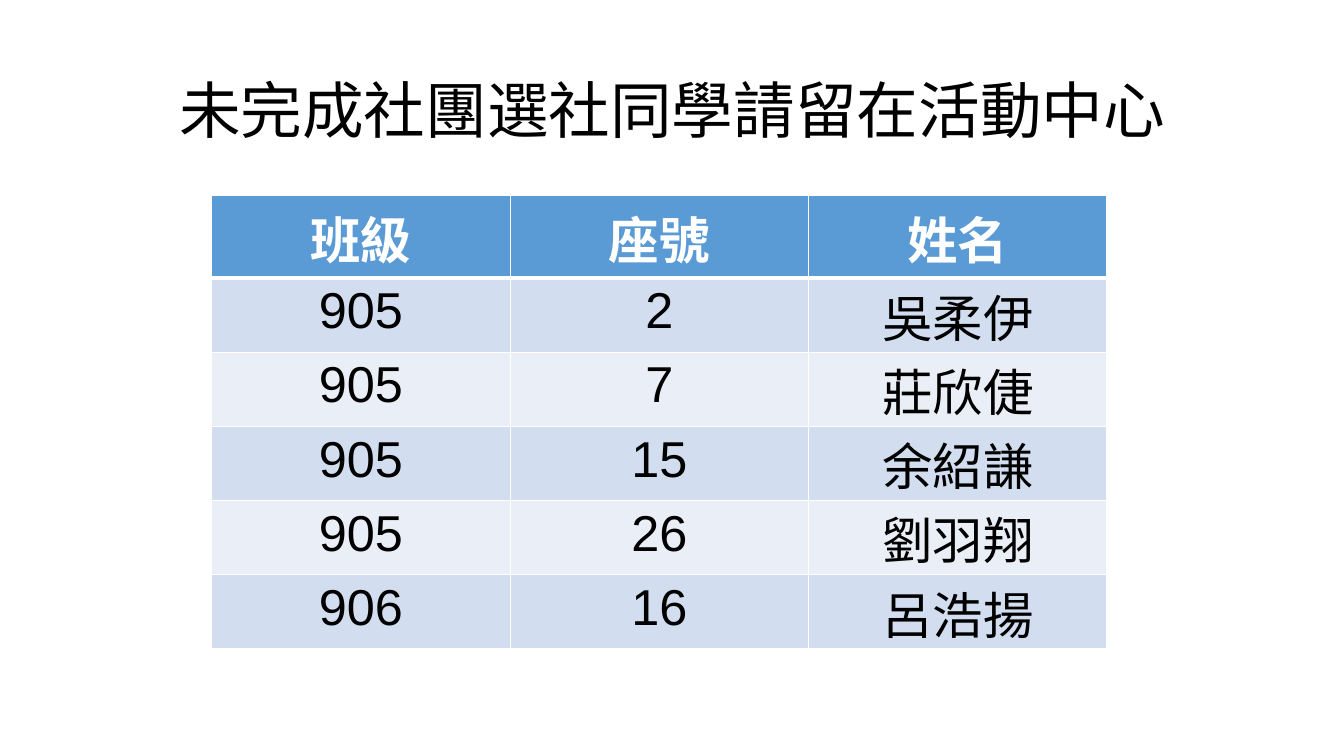
"""Build a slide listing the students asked to stay in the activity centre."""
from dataclasses import dataclass

from lxml import etree
from pptx import Presentation
from pptx.dml.color import RGBColor
from pptx.enum.text import MSO_ANCHOR, PP_ALIGN
from pptx.oxml.ns import qn
from pptx.util import Inches, Pt

CENTER = PP_ALIGN.CENTER
TOP, MIDDLE, BOTTOM = MSO_ANCHOR.TOP, MSO_ANCHOR.MIDDLE, MSO_ANCHOR.BOTTOM


@dataclass(frozen=True)
class Theme:
    text: str = "000000"
    white: str = "FFFFFF"
    header: str = "5B9BD5"
    bands: tuple = ("D2DEEF", "EAEFF7")
    latin: str = "Arial"
    cjk: str = "Noto Sans CJK SC"
    title_size: int = 44
    table_size: int = 36
    rule: int = 1
    header_rule: int = 3


T = Theme()


def write(p, text, size, color, font, bold=False):
    p.alignment = CENTER
    r = p.add_run()
    r.text = text
    r.font.size = Pt(size)
    r.font.bold = bold
    r.font.color.rgb = RGBColor.from_string(color)
    r.font.name = font
    etree.SubElement(r.font._element, qn("a:ea"), typeface=T.cjk)


def add_borders(cell, top, bottom):
    tc_pr = cell._tc.get_or_add_tcPr()
    widths = {"a:lnL": T.rule, "a:lnR": T.rule, "a:lnT": top, "a:lnB": bottom}
    for i, (tag, width) in enumerate(widths.items()):
        ln = etree.Element(qn(tag), w=str(Pt(width)))
        fill = etree.SubElement(ln, qn("a:solidFill"))
        etree.SubElement(fill, qn("a:srgbClr"), val=T.white)
        tc_pr.insert(i, ln)


prs = Presentation()
prs.slide_width, prs.slide_height = Inches(13.33), Inches(7.5)
s = prs.slides.add_slide(prs.slide_layouts[6])

title = s.shapes.add_textbox(Inches(0.92), Inches(0.4), Inches(11.5), Inches(1.45))
tf = title.text_frame
tf.word_wrap = True
tf.vertical_anchor = MIDDLE
p = tf.paragraphs[0]
p.line_spacing = 0.9
write(p, "未完成社團選社同學請留在活動中心", T.title_size, T.text, T.cjk)

rows = [
    ("班級", "座號", "姓名"),
    ("905", "2", "吳柔伊"),
    ("905", "7", "莊欣倢"),
    ("905", "15", "余紹謙"),
    ("905", "26", "劉羽翔"),
    ("906", "16", "呂浩揚"),
]
name_col = len(rows[0]) - 1
col_w, header_h, row_h = 2.96, 0.82, 0.735
table = s.shapes.add_table(
    len(rows), len(rows[0]), Inches(2.1), Inches(1.94),
    Inches(col_w * len(rows[0])), Inches(header_h + row_h * (len(rows) - 1)),
).table
for col in table.columns:
    col.width = Inches(col_w)

for i, row in enumerate(rows):
    is_header = i == 0
    table.rows[i].height = Inches(header_h if is_header else row_h)
    fill = T.header if is_header else T.bands[(i - 1) % 2]
    for j, text in enumerate(row):
        is_name = j == name_col and not is_header
        cell = table.cell(i, j)
        cell.vertical_anchor = BOTTOM if is_name else TOP
        if is_name:
            cell.margin_left = cell.margin_right = cell.margin_top = Inches(0.01)
            cell.margin_bottom = 0
        cell.fill.solid()
        cell.fill.fore_color.rgb = RGBColor.from_string(fill)
        add_borders(cell, T.header_rule if i == 1 else T.rule,
                    T.header_rule if is_header else T.rule)
        write(cell.text_frame.paragraphs[0], text, T.table_size,
              T.white if is_header else T.text,
              T.cjk if is_name else T.latin, is_header)

prs.save("out.pptx")
